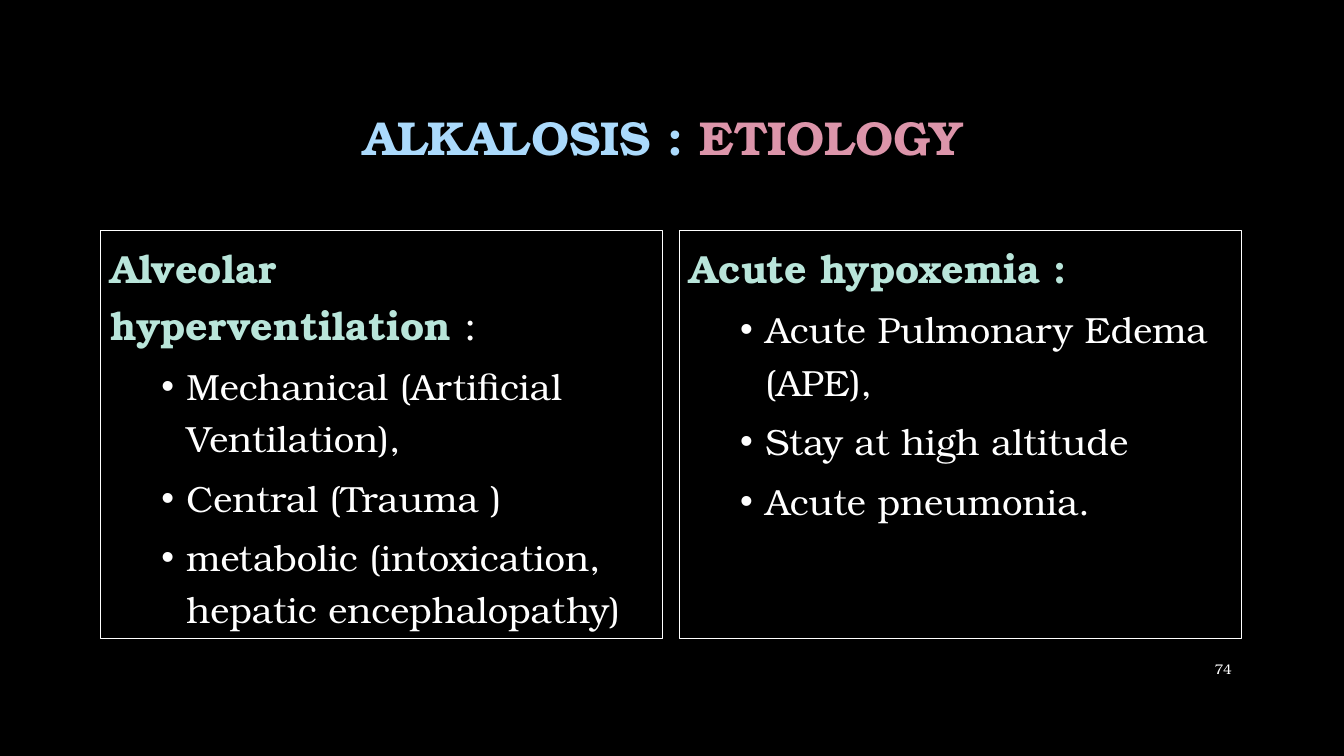
from lxml import etree
from pptx import Presentation
from pptx.dml.color import RGBColor
from pptx.enum.text import MSO_ANCHOR, MSO_AUTO_SIZE, PP_ALIGN
from pptx.oxml.ns import qn
from pptx.util import Pt

CENTER, RIGHT = PP_ALIGN.CENTER, PP_ALIGN.RIGHT
TOP, MIDDLE = MSO_ANCHOR.TOP, MSO_ANCHOR.MIDDLE
NO_AUTOFIT = MSO_AUTO_SIZE.NONE

BLACK = RGBColor(0x00, 0x00, 0x00)
WHITE = RGBColor(0xFF, 0xFF, 0xFF)
BLUE = RGBColor(0xAB, 0xDA, 0xFC)
PINK = RGBColor(0xDC, 0x95, 0xAA)
MINT = RGBColor(0xB9, 0xE5, 0xDA)
FONT = "TeX Gyre Bonum"
TWO_CONTENT_LAYOUT = 3

LEFT, CONTENT_WIDTH = 72, 815
COLUMN_GAP = 12
COLUMN_WIDTH = (CONTENT_WIDTH - COLUMN_GAP) / 2

COLUMNS = [
    (
        [("Alveolar hyperventilation ", MINT, True), (":", WHITE, False)],
        [
            "Mechanical (Artificial Ventilation),",
            "Central (Trauma )",
            "metabolic (intoxication, hepatic encephalopathy)",
        ],
    ),
    (
        [("Acute hypoxemia :", MINT, True)],
        [
            "Acute Pulmonary Edema (APE),",
            "Stay at high altitude",
            "Acute pneumonia.",
        ],
    ),
]


def place(shape, left, top, width, height, anchor):
    """Move a text shape to its box, in points, and fix its text area."""
    shape.left, shape.top = Pt(left), Pt(top)
    shape.width, shape.height = Pt(width), Pt(height)
    frame = shape.text_frame
    frame.word_wrap = True
    frame.auto_size = NO_AUTOFIT
    frame.vertical_anchor = anchor
    return frame


def set_font(paragraph, size):
    paragraph.font.name = FONT
    paragraph.font.size = Pt(size)


def add_runs(paragraph, runs):
    for text, color, bold in runs:
        run = paragraph.add_run()
        run.text = text
        run.font.color.rgb = color
        run.font.bold = bold


def set_bullet(paragraph, character, margin, indent):
    """Set the bullet and its indents in points; None removes the bullet."""
    properties = paragraph._p.get_or_add_pPr()
    properties.set("marL", str(Pt(margin)))
    properties.set("indent", str(Pt(indent)))
    if character is None:
        etree.SubElement(properties, qn("a:buNone"))
    else:
        etree.SubElement(properties, qn("a:buFont"), typeface="Arial")
        etree.SubElement(properties, qn("a:buChar"), char=character)


def fill_title(title, left, top, width, height):
    paragraph = place(title, left, top, width, height, MIDDLE).paragraphs[0]
    paragraph.alignment = CENTER
    paragraph.line_spacing = 0.9
    add_runs(paragraph, [("ALKALOSIS : ", BLUE, True), ("ETIOLOGY ", PINK, True)])
    set_font(paragraph, 34)


def fill_column(body, heading_runs, causes, left, top, width, height):
    frame = place(body, left, top, width, height, TOP)
    body.line.color.rgb = WHITE
    body.line.width = Pt(0.75)

    heading = frame.paragraphs[0]
    heading.line_spacing = 1.2
    heading.space_before = Pt(10)
    set_bullet(heading, None, 0, 0)
    add_runs(heading, heading_runs)
    set_font(heading, 28)

    for cause in causes:
        paragraph = frame.add_paragraph()
        paragraph.level = 1
        paragraph.line_spacing = 1.2
        paragraph.space_before = Pt(5)
        set_bullet(paragraph, "•", 54, -18)
        add_runs(paragraph, [(cause, WHITE, False)])
        set_font(paragraph, 26)


def add_slide_number(slide, number, left, top, width, height):
    box = slide.shapes.add_textbox(0, 0, 0, 0)
    paragraph = place(box, left, top, width, height, MIDDLE).paragraphs[0]
    paragraph.alignment = RIGHT
    add_runs(paragraph, [(number, WHITE, False)])
    set_font(paragraph, 10)


def build_etiology_slide(presentation):
    layout = presentation.slide_layouts[TWO_CONTENT_LAYOUT]
    slide = presentation.slides.add_slide(layout)
    slide.background.fill.solid()
    slide.background.fill.fore_color.rgb = BLACK

    title, *bodies = slide.placeholders
    fill_title(title, LEFT, 48, CONTENT_WIDTH, 104.5)
    for index, (body, (heading_runs, causes)) in enumerate(zip(bodies, COLUMNS)):
        left = LEFT + index * (COLUMN_WIDTH + COLUMN_GAP)
        fill_column(body, heading_runs, causes, left, 164.5, COLUMN_WIDTH, 291.5)
    add_slide_number(slide, "74", 828, 463, 59, 29)


def main():
    presentation = Presentation()
    presentation.slide_width, presentation.slide_height = Pt(960), Pt(540)
    build_etiology_slide(presentation)
    presentation.save("out.pptx")


if __name__ == "__main__":
    main()
